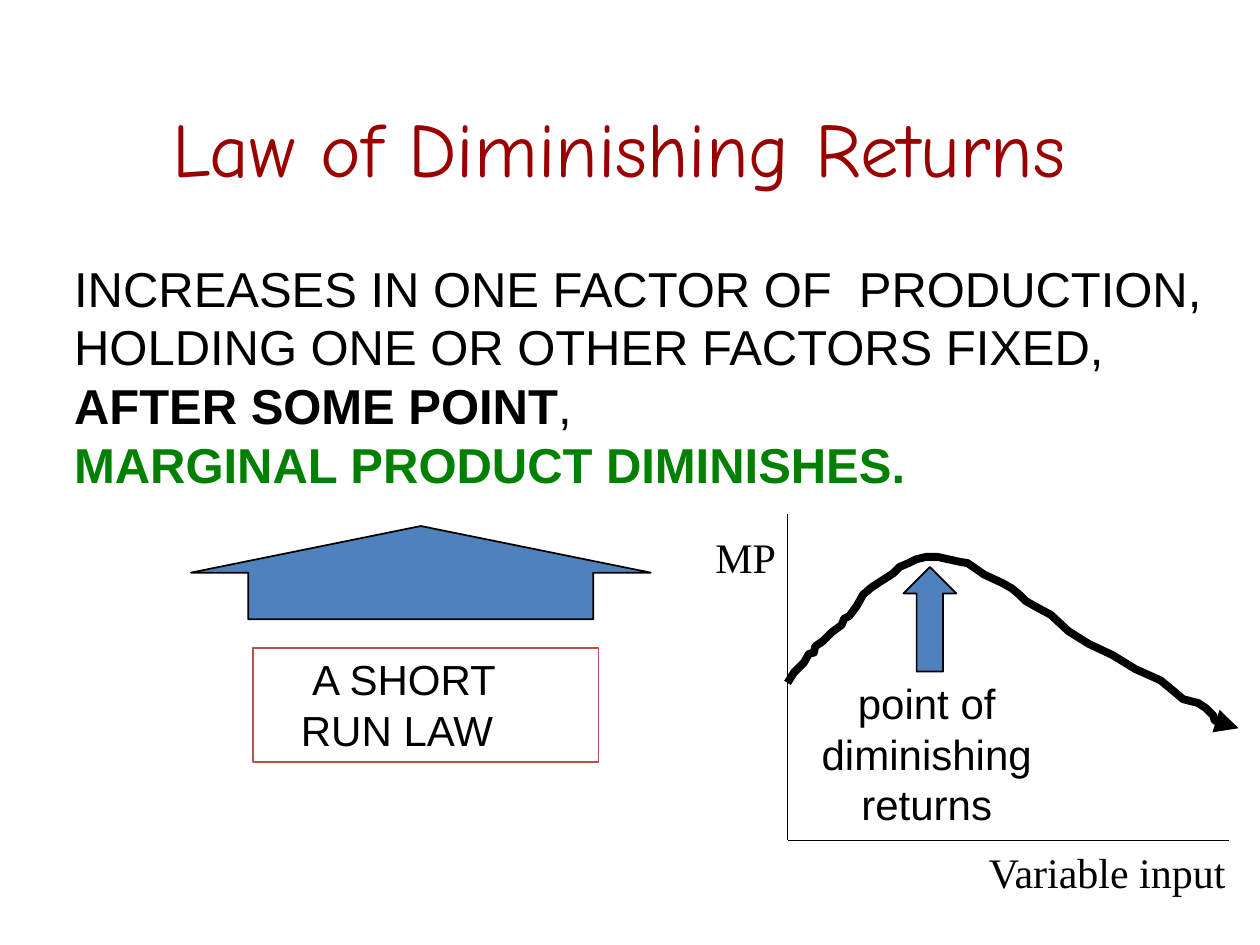
from dataclasses import dataclass

from lxml import etree
from pptx import Presentation
from pptx.dml.color import RGBColor
from pptx.enum.shapes import MSO_CONNECTOR, MSO_SHAPE
from pptx.enum.text import MSO_ANCHOR, MSO_AUTO_SIZE, PP_ALIGN
from pptx.oxml.ns import qn
from pptx.util import Pt

PX = 9144  # 100 px to the inch
LEFT, CENTER = PP_ALIGN.LEFT, PP_ALIGN.CENTER
MIDDLE = MSO_ANCHOR.MIDDLE
TOP = MSO_ANCHOR.TOP
GROW, FIXED = MSO_AUTO_SIZE.SHAPE_TO_FIT_TEXT, MSO_AUTO_SIZE.NONE
STRAIGHT = MSO_CONNECTOR.STRAIGHT
RECTANGLE = MSO_SHAPE.RECTANGLE
RIGHT_ARROW, UP_ARROW = MSO_SHAPE.RIGHT_ARROW, MSO_SHAPE.UP_ARROW

COLORS = {"title": "990000", "ink": "000000", "accent": "008000",
          "arrow": "4F81BD", "frame": "C0504D"}


@dataclass(frozen=True)
class Span:
    text: str
    bold: bool = False
    color: str = "ink"


@dataclass(frozen=True)
class Line:
    spans: tuple[Span, ...]
    indent: int = 0


@dataclass(frozen=True)
class Label:
    place: tuple[int, int, int, int]
    lines: tuple[Line, ...]
    size: int = 24
    font: str = "Arial"
    align: PP_ALIGN = LEFT
    wrap: bool = True


@dataclass(frozen=True)
class BlockArrow:
    kind: MSO_SHAPE
    place: tuple[int, int, int, int]
    shaft: float
    rotation: int = 0


LABELS = (
    Label((49, 200, 951, 197), (
        Line((Span("INCREASES IN ONE FACTOR OF  PRODUCTION,"),)),
        Line((Span("HOLDING ONE OR OTHER FACTORS FIXED,"),)),
        Line((Span("AFTER SOME POINT", bold=True), Span(","))),
        Line((Span("MARGINAL PRODUCT DIMINISHES.", True, "accent"),)),
    ), size=28),
    Label((642, 533, 187, 130), (
        Line((Span("point of"),)),
        Line((Span("diminishing"),)),
        Line((Span("returns"),)),
    ), align=CENTER, wrap=False),
    Label((775, 667, 211, 50), (Line((Span("Variable input"),)),),
          font="Times New Roman", wrap=False),
    Label((550, 417, 83, 50), (Line((Span("MP"),), indent=8),),
          font="Times New Roman"),
)
SHORT_RUN = Label((201, 514, 274, 91), (
    Line((Span("A SHORT"),), indent=37),
    Line((Span("RUN LAW"),), indent=28),
))
ARROWS = (
    BlockArrow(RIGHT_ARROW, (297, 272, 74, 365), 0.75, rotation=270),
    BlockArrow(UP_ARROW, (717, 450, 42, 83), 0.5),
)
ORIGIN = (625, 667)
AXIS_ENDS = ((625, 408), (975, 667))
MARGINAL_PRODUCT = (
    (625, 542), (630, 534), (638, 526), (642, 519), (646, 518), (647, 513),
    (653, 509), (660, 502), (668, 496), (670, 491), (674, 489), (680, 481),
    (685, 472), (692, 466), (709, 455), (714, 450), (721, 447), (727, 444),
    (735, 442), (744, 442), (762, 446), (768, 447), (781, 456), (796, 463),
    (803, 467), (809, 472), (814, 477), (821, 481), (834, 488), (848, 501),
    (864, 511), (883, 520), (901, 531), (921, 540), (932, 549), (939, 555),
    (951, 558), (957, 562), (963, 568), (964, 572), (983, 578),
)


def rgb(name: str) -> RGBColor:
    return RGBColor.from_string(COLORS[name])


def emu(lengths) -> list[int]:
    return [length * PX for length in lengths]


def outline(shape, color: str, points: float = 1) -> None:
    shape.line.color.rgb = rgb(color)
    shape.line.width = Pt(points)


def write(box, label: Label, anchor=TOP, autosize=GROW) -> None:
    frame = box.text_frame
    frame.word_wrap = label.wrap
    frame.auto_size = autosize
    frame.vertical_anchor = anchor
    for index, line in enumerate(label.lines):
        para = frame.add_paragraph() if index else frame.paragraphs[0]
        para.alignment = label.align
        if line.indent:
            para._p.get_or_add_pPr().set("marL", str(line.indent * PX))
        for span in line.spans:
            run = para.add_run()
            run.text = span.text
            run.font.name = label.font
            run.font.size = Pt(label.size)
            run.font.bold = span.bold
            run.font.color.rgb = rgb(span.color)


def draw_arrow(page, arrow: BlockArrow) -> None:
    shape = page.shapes.add_shape(arrow.kind, *emu(arrow.place))
    shape.adjustments[0] = arrow.shaft
    shape.adjustments[1] = 0.5
    shape.rotation = arrow.rotation
    shape.shadow.inherit = False
    shape.fill.solid()
    shape.fill.fore_color.rgb = rgb("arrow")
    outline(shape, "ink")


def draw_axis(page, end: tuple[int, int]) -> None:
    axis = page.shapes.add_connector(STRAIGHT, *emu(end + ORIGIN))
    outline(axis, "ink")
    etree.SubElement(axis._element.spPr, qn("a:effectLst"))


def draw_curve(page) -> None:
    start, *rest = MARGINAL_PRODUCT
    builder = page.shapes.build_freeform(*start, scale=PX)
    builder.add_line_segments(rest, close=False)
    curve = builder.convert_to_shape()
    curve.shadow.inherit = False
    curve.fill.background()
    outline(curve, "ink", 4.5)
    stroke = curve.line._get_or_add_ln()
    etree.SubElement(stroke, qn("a:round"))
    etree.SubElement(stroke, qn("a:tailEnd"), type="triangle")


def main() -> None:
    deck = Presentation()
    deck.slide_width, deck.slide_height = emu((1000, 750))
    page = deck.slides.add_slide(deck.slide_layouts[5])

    # Title
    heading = Label((67, 67, 849, 99),
                    (Line((Span("Law of Diminishing Returns", color="title"),)),),
                    size=44, font="Comic Neue", align=CENTER)
    title = page.shapes.title
    title.left, title.top, title.width, title.height = emu(heading.place)
    write(title, heading, MIDDLE, FIXED)

    # Framed note
    note = page.shapes.add_shape(RECTANGLE, *emu(SHORT_RUN.place))
    note.shadow.inherit = False
    note.fill.background()
    outline(note, "frame")
    write(note, SHORT_RUN)

    # Marginal product graph and arrows
    for end in AXIS_ENDS:
        draw_axis(page, end)
    draw_curve(page)
    for arrow in ARROWS:
        draw_arrow(page, arrow)

    # Statement and graph labels
    for label in LABELS:
        write(page.shapes.add_textbox(*emu(label.place)), label)

    deck.save("out.pptx")


if __name__ == "__main__":
    main()
